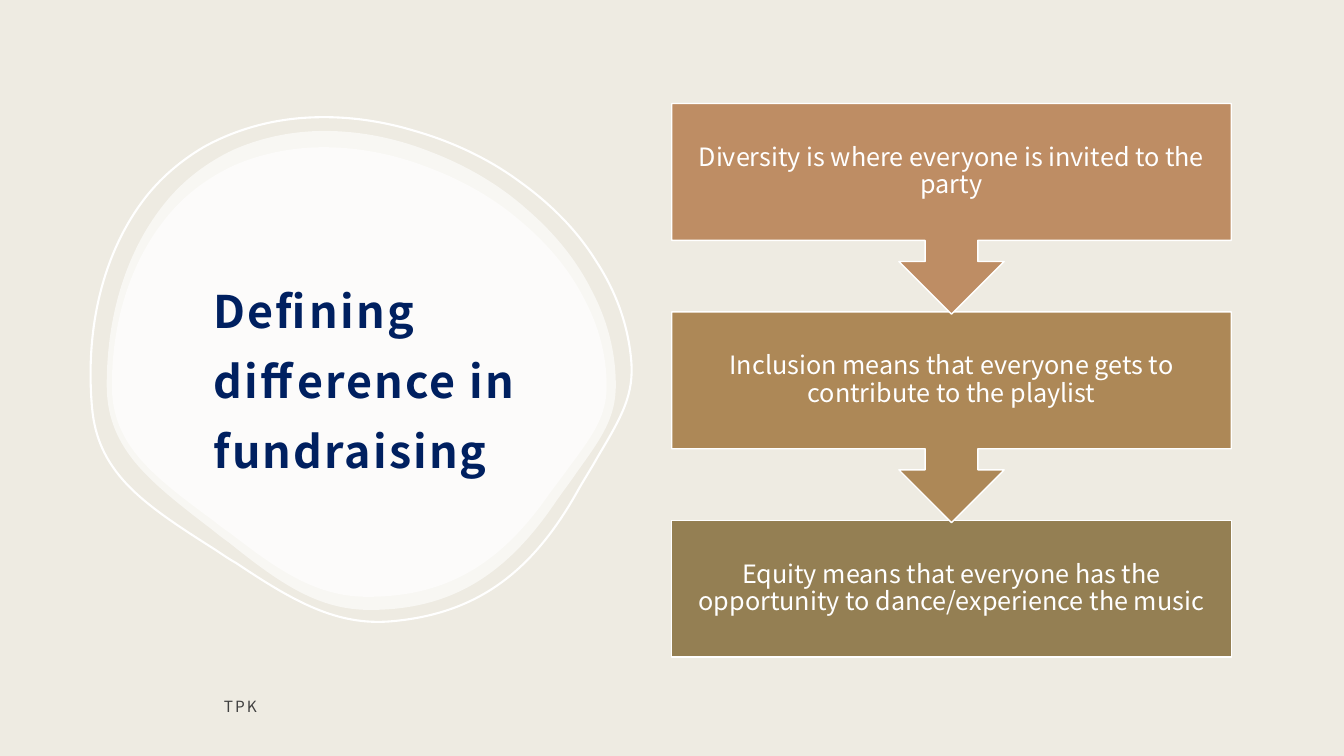
from dataclasses import dataclass

from lxml.etree import SubElement
from pptx import Presentation
from pptx.dml.color import RGBColor
from pptx.enum.shapes import MSO_SHAPE
from pptx.enum.text import MSO_ANCHOR, MSO_AUTO_SIZE, PP_ALIGN
from pptx.oxml.ns import qn
from pptx.util import Cm, Pt


@dataclass(frozen=True)
class Theme:
    font: str = "Noto Sans CJK JP"
    background: str = "EEEBE2"
    white: str = "FFFFFF"
    title: str = "002060"
    footer: str = "404040"
    steps: tuple = ("BE8D64", "AD8857", "947F53")
    title_size: int = 32
    step_size: int = 18
    footer_size: int = 11


THEME = Theme()
BLOB_SIZE = (5.05, 4.75)
BLOB_START = (2.16, 0)
BLOB_CURVES = [
    ((1.83, 0), (1.52, 0.07), (1.25, 0.19)),
    ((1, 0.31), (0.77, 0.48), (0.59, 0.7)),
    ((0.21, 1.16), (0, 1.8), (0, 2.52)),
    ((0, 2.8), (0.08, 3.03), (0.26, 3.26)),
    ((0.45, 3.5), (0.74, 3.72), (1.04, 3.95)),
    ((1.09, 3.99), (1.15, 4.04), (1.21, 4.08)),
    ((1.72, 4.49), (2.1, 4.75), (2.61, 4.75)),
    ((3.39, 4.75), (3.95, 4.43), (4.46, 3.67)),
    ((4.53, 3.57), (4.6, 3.48), (4.66, 3.39)),
    ((4.92, 3.03), (5.05, 2.84), (5.05, 2.52)),
    ((5.05, 2.2), (4.97, 1.88), (4.81, 1.58)),
    ((4.66, 1.28), (4.44, 1.01), (4.16, 0.77)),
    ((3.89, 0.53), (3.56, 0.34), (3.22, 0.21)),
    ((2.87, 0.07), (2.51, 0), (2.16, 0)),
]
STEPS = [
    "Diversity is where everyone is invited to the party",
    "Inclusion means that everyone gets to contribute to the playlist",
    "Equity means that everyone has the opportunity to dance/experience the music",
]


def rgb(value):
    return RGBColor.from_string(value)


def write(sp, text, *, size, color, bold=False, align=PP_ALIGN.LEFT,
          line_spacing=1.0, tracking=0, inset=0.3, bottom=0.25):
    tf = sp.text_frame
    tf.word_wrap = True
    tf.auto_size = MSO_AUTO_SIZE.NONE
    tf.vertical_anchor = MSO_ANCHOR.MIDDLE
    tf.margin_left = tf.margin_right = tf.margin_top = Cm(inset)
    tf.margin_bottom = Cm(bottom)
    p = tf.paragraphs[0]
    p.alignment = align
    p.line_spacing = line_spacing
    r = p.add_run()
    r.text = text
    r.font.name = THEME.font
    r.font.size = Pt(size)
    r.font.bold = bold
    r.font.color.rgb = rgb(color)
    if tracking:
        r.font._element.set("spc", str(round(tracking * 100)))


def add_blob(s, x, y, w, h, *, opacity=None, rotation=0):
    def scaled(point):
        return Cm(point[0] * w / BLOB_SIZE[0]), Cm(point[1] * h / BLOB_SIZE[1])

    fb = s.shapes.build_freeform(*scaled(BLOB_START))
    fb.add_line_segments([scaled(curve[-1]) for curve in BLOB_CURVES], close=True)
    sp = fb.convert_to_shape(Cm(x), Cm(y))
    segments = list(sp._element.spPr.iter(qn("a:lnTo")))
    for segment, curve in zip(segments, BLOB_CURVES):
        bezier = segment.getparent().makeelement(qn("a:cubicBezTo"))
        for px, py in map(scaled, curve):
            SubElement(bezier, qn("a:pt"), x=str(int(px)), y=str(int(py)))
        segment.getparent().replace(segment, bezier)
    sp.shadow.inherit = False
    sp.rotation = rotation
    if opacity is None:
        sp.fill.background()
        sp.line.color.rgb = rgb(THEME.white)
        sp.line.width = Pt(1.5)
    else:
        sp.fill.solid()
        sp.fill.fore_color.rgb = rgb(THEME.white)
        color = sp._element.spPr.find(qn("a:solidFill"))[0]
        SubElement(color, qn("a:alpha")).set("val", str(opacity * 1000))
        sp.line.fill.background()


def add_title_region(s, x, y, w, h):
    add_blob(s, x + 0.43, y + 0.43, w - 0.81, h - 0.76, opacity=60)
    add_blob(s, x + 0.56, y + 0.84, w - 1.17, h - 1.5, opacity=60)
    add_blob(s, x, y, w, h, rotation=-5)
    sp = s.shapes.title
    sp.left, sp.top, sp.width, sp.height = Cm(x + 2.82), Cm(y + 2.41), Cm(9.2), Cm(8.15)
    write(sp, "Defining difference in fundraising", size=THEME.title_size,
          color=THEME.title, bold=True, line_spacing=1.3, tracking=1.5)
    s.shapes._spTree.append(sp._element)


def add_steps(s, x, y, w, h):
    box_h = 3.45
    pitch = (h - box_h) / (len(STEPS) - 1)
    last = len(STEPS) - 1
    for i in range(last, -1, -1):
        kind = MSO_SHAPE.RECTANGLE if i == last else MSO_SHAPE.DOWN_ARROW_CALLOUT
        step_h = box_h if i == last else box_h / 0.65
        sp = s.shapes.add_shape(kind, Cm(x), Cm(y + i * pitch), Cm(w), Cm(step_h))
        sp.shadow.inherit = False
        sp.fill.solid()
        sp.fill.fore_color.rgb = rgb(THEME.steps[i])
        sp.line.color.rgb = rgb(THEME.white)
        sp.line.width = Pt(1)
        write(sp, STEPS[i], size=THEME.step_size, color=THEME.white,
              align=PP_ALIGN.CENTER, line_spacing=0.9, inset=0.36, bottom=0.36)


def add_footer(s, x, y, w, h):
    sp = s.shapes.add_textbox(Cm(x), Cm(y), Cm(w), Cm(h))
    write(sp, "TPK", size=THEME.footer_size, color=THEME.footer, tracking=1.5)


def main():
    prs = Presentation()
    prs.slide_width, prs.slide_height = Cm(33.87), Cm(19.05)
    s = prs.slides.add_slide(prs.slide_layouts[5])
    s.background.fill.solid()
    s.background.fill.fore_color.rgb = rgb(THEME.background)
    add_title_region(s, 2.26, 2.87, 13.64, 12.83)
    add_steps(s, 16.93, 2.61, 14.1, 13.95)
    add_footer(s, 5.34, 17.15, 15.75, 1.27)
    prs.save("out.pptx")


if __name__ == "__main__":
    main()
